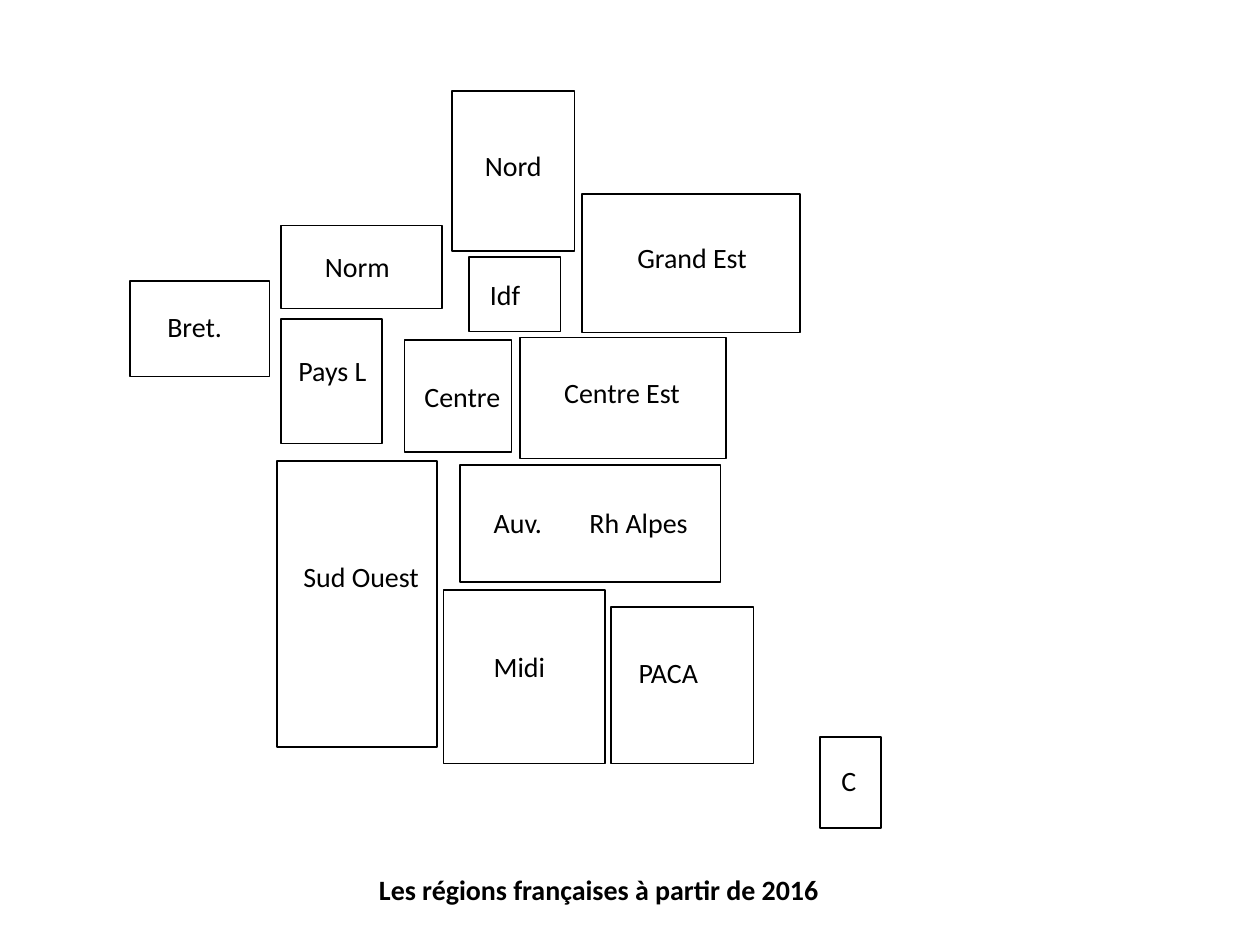
from pptx import Presentation
from pptx import util as u
from pptx.dml.color import RGBColor
from pptx.enum import shapes, text

COLUMNS, ROWS = 100, 75
CELL = u.Inches(0.1)
COLORS = {"ink": "000000"}
FONT, SIZE = "Calibri", u.Pt(16)
LABEL_HEIGHT = 3.7

# Region box (column, row, columns, rows), then its labels:
# wording, offset from the region's corner (columns, rows), width
REGIONS = [
    ((10.3, 22.3, 11.1, 7.6), [("Bret.", 2, 1.8, 6.4)]),
    ((22.3, 25.3, 8, 9.9), [("Pays L", 0.4, 2.3, 7.5)]),
    ((37.2, 20.4, 7.3, 5.9), [("Idf", 0.7, 1.1, 4.4)]),
    ((48.5, 48.2, 11.3, 12.4), [("PACA", 1.2, 3.3, 6.8)]),
    ((32.1, 27, 8.5, 8.9), [("Centre", 0.6, 2.6, 8.1)]),
    ((65.1, 58.5, 4.8, 7.2), [("C", 0.7, 1.6, 3.2)]),
    ((35.9, 7.2, 9.7, 12.7), [("Nord", 1.6, 4.1, 6.6)]),
    ((46.2, 15.4, 17.3, 11), [("Grand Est", 3.4, 3.2, 10.8)]),
    ((41.3, 26.8, 16.3, 9.6), [("Centre Est", 2.5, 2.5, 11.3)]),
    ((36.5, 36.9, 20.7, 9.3), [("Auv.", 1.7, 2.7, 5.9),
                               ("Rh Alpes", 9.3, 2.7, 9.9)]),
    ((35.2, 46.8, 12.8, 13.8), [("Midi", 3, 4.3, 6.1)]),
    ((22.3, 17.9, 12.8, 6.6), [("Norm", 2.5, 1.4, 7.2)]),
    ((22, 36.6, 12.7, 22.7), [("Sud Ouest", 1.1, 7.3, 11.3)]),
]
CAPTION = ("Les régions françaises à partir de 2016", (29.1, 68.8, 37.4, LABEL_HEIGHT))


def cells(*counts):
    """Turn counts of grid cells into lengths."""
    return [round(count * CELL) for count in counts]


def color(name):
    return RGBColor.from_string(COLORS[name])


def add_label(page, wording, area, bold=False):
    box = page.shapes.add_textbox(*cells(*area))
    frame = box.text_frame
    frame.word_wrap = False
    frame.auto_size = text.MSO_AUTO_SIZE.SHAPE_TO_FIT_TEXT
    para = frame.paragraphs[0]
    para.text = wording
    para.font.name, para.font.size, para.font.bold = FONT, SIZE, bold
    para.font.color.rgb = color("ink")


def add_region(page, area, labels):
    region = page.shapes.add_shape(shapes.MSO_SHAPE.RECTANGLE, *cells(*area))
    region.shadow.inherit = False
    region.fill.background()
    region.line.color.rgb = color("ink")
    region.line.width = u.Pt(1)
    left, top = area[:2]
    for wording, across, down, width in labels:
        add_label(page, wording, (left + across, top + down, width, LABEL_HEIGHT))


def main():
    deck = Presentation()
    deck.slide_width, deck.slide_height = cells(COLUMNS, ROWS)
    page = deck.slides.add_slide(deck.slide_layouts[6])
    for area, labels in REGIONS:
        add_region(page, area, labels)
    add_label(page, *CAPTION, bold=True)
    deck.save("out.pptx")


if __name__ == "__main__":
    main()
